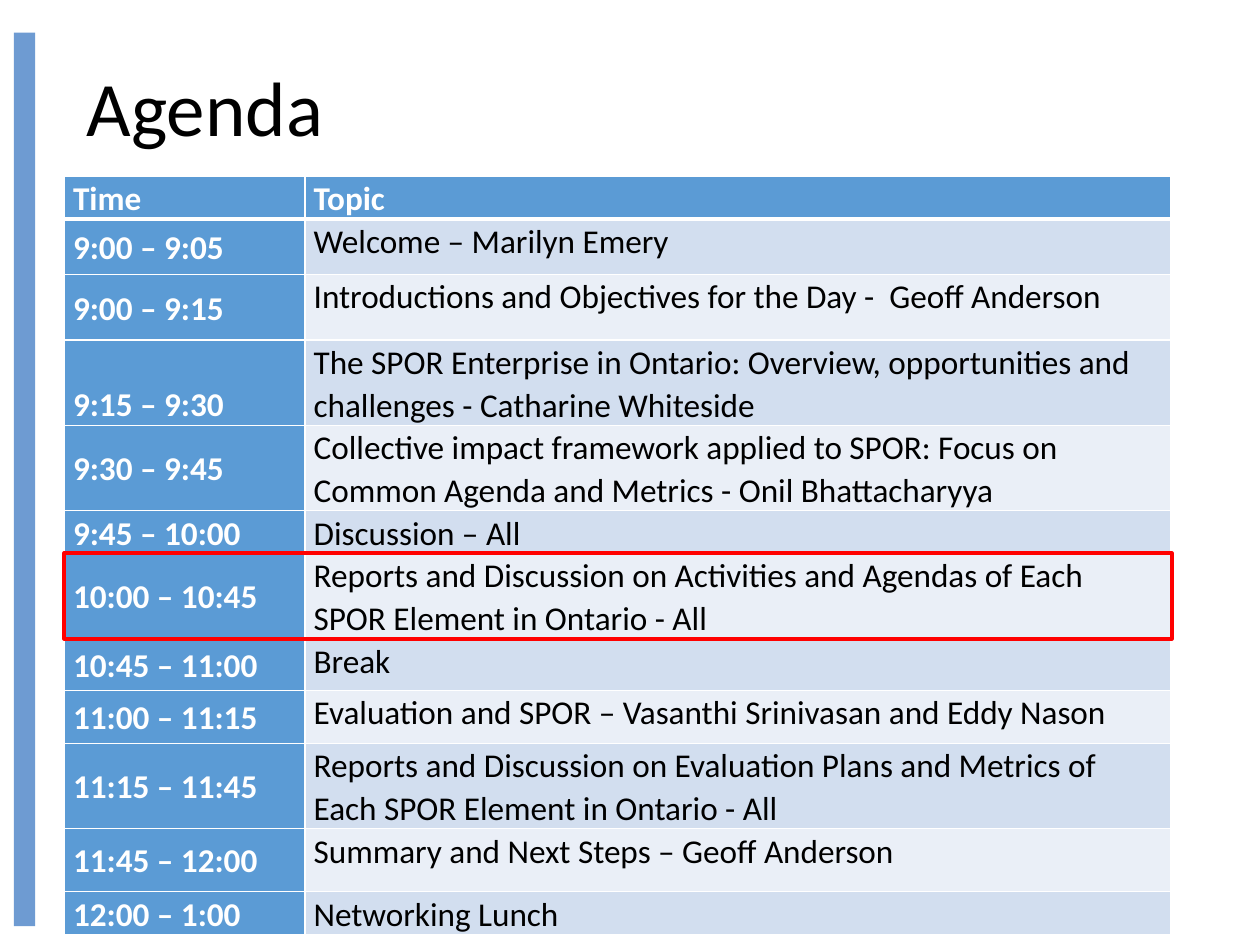
from lxml import etree
from pptx import Presentation
from pptx.dml.color import RGBColor
from pptx.enum import shapes, text
from pptx.oxml import ns
from pptx.util import Inches, Pt

WHITE = RGBColor(0xFF, 0xFF, 0xFF)
BLACK = RGBColor(0, 0, 0)
RED = RGBColor(0xFF, 0, 0)
BAR = RGBColor(0x6E, 0x9B, 0xD2)
BLUE = RGBColor(0x5B, 0x9B, 0xD5)
BANDS = (RGBColor(0xEA, 0xEF, 0xF7), RGBColor(0xD2, 0xDE, 0xEF))
FONT = "Calibri"
TOP, MID, LOW = (text.MSO_ANCHOR.TOP, text.MSO_ANCHOR.MIDDLE,
                 text.MSO_ANCHOR.BOTTOM)

COLS = (1.91, 6.87)
ROWS = (
    (0.33, TOP, "Time", "Topic"),
    (0.44, MID, "9:00 – 9:05", "Welcome – Marilyn Emery"),
    (0.52, MID, "9:00 – 9:15",
     "Introductions and Objectives for the Day -  Geoff Anderson"),
    (0.66, LOW, "9:15 – 9:30",
     "The SPOR Enterprise in Ontario: Overview, opportunities and "
     "challenges - Catharine Whiteside"),
    (0.66, MID, "9:30 – 9:45",
     "Collective impact framework applied to SPOR: Focus on Common Agenda "
     "and Metrics - Onil Bhattacharyya"),
    (0.33, TOP, "9:45 – 10:00", "Discussion – All"),
    (0.66, MID, "10:00 – 10:45",
     "Reports and Discussion on Activities and Agendas of Each SPOR Element "
     "in Ontario - All"),
    (0.41, MID, "10:45 – 11:00", "Break"),
    (0.42, MID, "11:00 – 11:15",
     "Evaluation and SPOR – Vasanthi Srinivasan and Eddy Nason"),
    (0.66, MID, "11:15 – 11:45",
     "Reports and Discussion on Evaluation Plans and Metrics of Each SPOR "
     "Element in Ontario - All"),
    (0.5, MID, "11:45 – 12:00", "Summary and Next Steps – Geoff Anderson"),
    (0.33, MID, "12:00 – 1:00", "Networking Lunch"),
)


def write(frame, words, size, color, bold, space):
    para = frame.paragraphs[0]
    para.text = words
    para.line_spacing = space
    font = para.font
    font.name, font.size, font.bold = FONT, Pt(size), bold
    font.color.rgb = color


def add_rect(slide, box, fill=None, line=None):
    rect = slide.shapes.add_shape(
        shapes.MSO_SHAPE.RECTANGLE, *map(Inches, box))
    rect.shadow.inherit = False
    if fill is None:
        rect.fill.background()
    else:
        rect.fill.solid()
        rect.fill.fore_color.rgb = fill
    if line is None:
        rect.line.fill.background()
    else:
        rect.line.color.rgb = line
        rect.line.width = Pt(2.25)


def add_title(slide, box, words):
    frame = slide.shapes.add_textbox(*map(Inches, box)).text_frame
    frame.word_wrap = True
    frame.vertical_anchor = MID
    write(frame, words, 44, BLACK, False, 0.9)


def edge(cell, base):
    props = cell._tc.get_or_add_tcPr()
    sides = (("lnL", 1), ("lnR", 1), ("lnT", 1), ("lnB", base))
    for spot, (side, width) in enumerate(sides):
        line = etree.Element(ns.qn("a:" + side), w=str(Pt(width)))
        fill = etree.SubElement(line, ns.qn("a:solidFill"))
        etree.SubElement(fill, ns.qn("a:srgbClr"), val=str(WHITE))
        props.insert(spot, line)


def fill_cell(cell, words, anchor, fill, color, bold, base):
    cell.margin_left = cell.margin_right = Inches(0.07)
    cell.margin_top = cell.margin_bottom = 0
    cell.vertical_anchor = anchor
    cell.fill.solid()
    cell.fill.fore_color.rgb = fill
    write(cell.text_frame, words, 19, color, bold, 1.07)
    edge(cell, base)


def add_agenda(slide, box):
    table = slide.shapes.add_table(
        len(ROWS), len(COLS), *map(Inches, box)).table
    for col, width in zip(table.columns, COLS):
        col.width = Inches(width)
    for num, (height, anchor, time, topic) in enumerate(ROWS):
        table.rows[num].height = Inches(height)
        head = num == 0
        base = 3 if head else 1
        fill_cell(table.cell(num, 0), time, anchor, BLUE, WHITE, True, base)
        fill_cell(table.cell(num, 1), topic, TOP,
                  BLUE if head else BANDS[num % 2],
                  WHITE if head else BLACK, head, base)


def main():
    deck = Presentation()
    deck.slide_width, deck.slide_height = Inches(10), Inches(7.5)
    slide = deck.slides.add_slide(deck.slide_layouts[6])
    add_rect(slide, (0.11, 0.26, 0.17, 7.09), fill=BAR)
    add_title(slide, (0.59, 0.16, 8.62, 1.45), "Agenda")
    add_agenda(slide, (0.51, 1.4, 8.78, 6))
    add_rect(slide, (0.51, 4.39, 8.79, 0.68), line=RED)
    deck.save("out.pptx")


if __name__ == "__main__":
    main()
